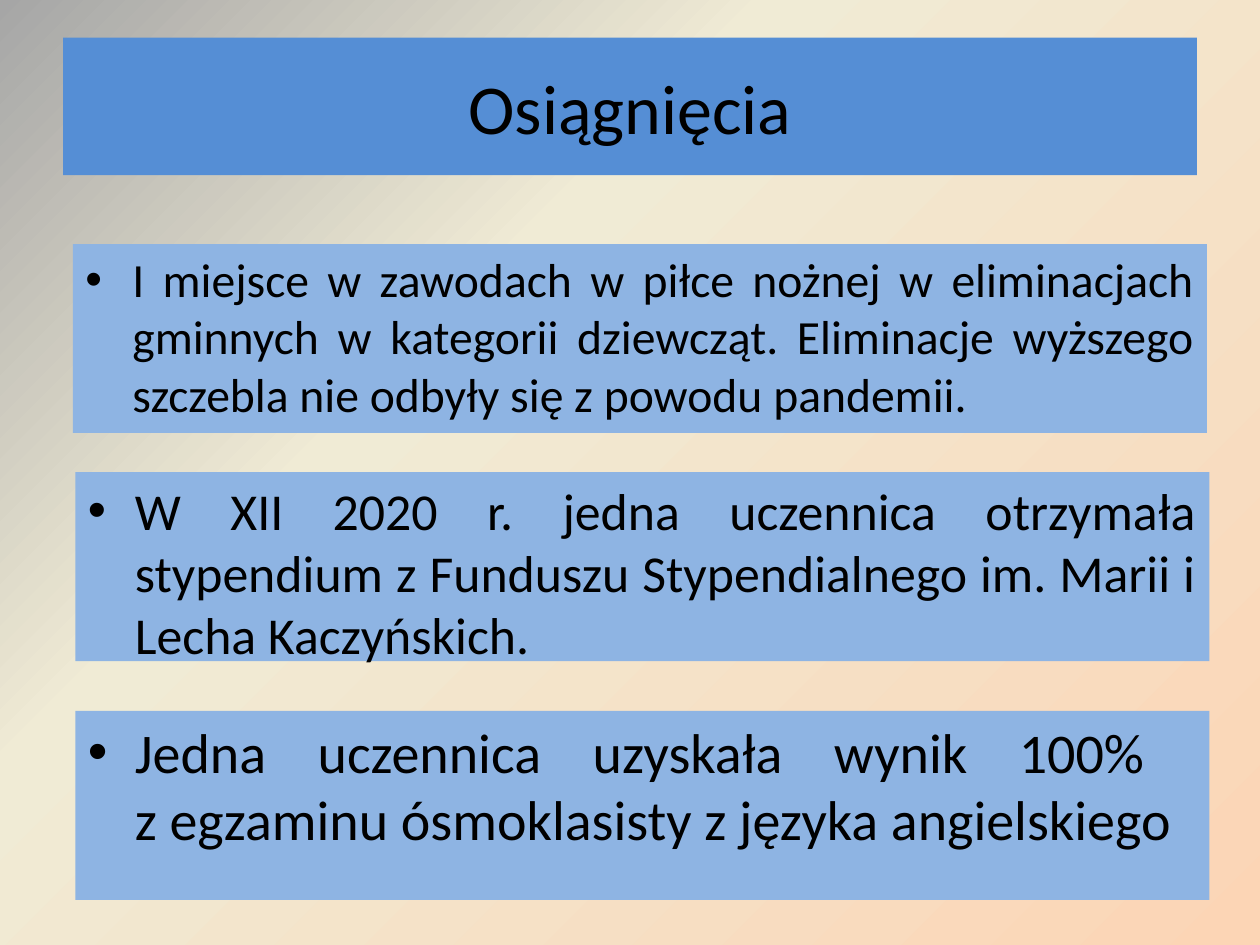
import pptx
import pptx.util
import pptx.oxml
import pptx.oxml.ns
import pptx.dml.color
import pptx.enum.shapes
import pptx.enum.text
from pptx.util import Cm

PP = pptx.enum.text.PP_ALIGN
ANCHOR = pptx.enum.text.MSO_ANCHOR
NS = pptx.oxml.ns.nsdecls("a", "p")


def paint(part, tone):
    """Fill a shape or a font with one solid colour."""
    part.fill.solid()
    part.fill.fore_color.rgb = pptx.dml.color.RGBColor.from_string(tone)


def style(para, size, align):
    para.alignment = align
    para.font.name = "Calibri"
    para.font.size = pptx.util.Pt(size)
    paint(para.font, "000000")


deck = pptx.Presentation()
deck.slide_width, deck.slide_height = Cm(25.4), Cm(19.05)
slide = deck.slides.add_slide(deck.slide_layouts[5])

# Round gradient that spreads from the bottom right corner
stops = [(0, "FCD5B5"), (65, "F0EBD5"), (100, "A6A6A6")]
marks = "".join(
    f'<a:gs pos="{pos * 1000}"><a:srgbClr val="{tone}"/></a:gs>' for pos, tone in stops
)
back = pptx.oxml.parse_xml(
    f'<p:bg {NS}><p:bgPr><a:gradFill rotWithShape="1"><a:gsLst>{marks}</a:gsLst>'
    '<a:path path="circle"><a:fillToRect l="100000" t="100000"/></a:path>'
    "</a:gradFill><a:effectLst/></p:bgPr></p:bg>"
)
slide.element.cSld.insert(0, back)

title = slide.shapes.title
title.left, title.top, title.width, title.height = Cm(1.27), Cm(0.76), Cm(22.86), Cm(2.77)
paint(title, "558ED5")
title.text_frame.text = "Osiągnięcia"
title.text_frame.vertical_anchor = ANCHOR.MIDDLE
style(title.text_frame.paragraphs[0], 40, PP.CENTER)

# Left, top, text size and wording of each panel
panels = [
    (1.47, 4.92, 27.2,
     "I miejsce w zawodach w piłce nożnej w eliminacjach gminnych w kategorii "
     "dziewcząt. Eliminacje wyższego szczebla nie odbyły się z powodu pandemii."),
    (1.52, 9.52, 29.6,
     "W XII 2020 r. jedna uczennica otrzymała stypendium z Funduszu "
     "Stypendialnego im. Marii i Lecha Kaczyńskich."),
    (1.52, 14.33, 32,
     "Jedna uczennica uzyskała wynik 100% \n"
     "z egzaminu ósmoklasisty z języka angielskiego "),
]
for left, top, size, words in panels:
    panel = slide.shapes.add_shape(
        pptx.enum.shapes.MSO_SHAPE.RECTANGLE, Cm(left), Cm(top), Cm(22.86), Cm(3.81)
    )
    panel.shadow.inherit = False
    panel.line.fill.background()
    paint(panel, "8EB4E3")
    frame = panel.text_frame
    frame.word_wrap = True
    frame.vertical_anchor = ANCHOR.TOP
    para = frame.paragraphs[0]
    para.text = words
    style(para, size, PP.JUSTIFY)
    props = para._p.get_or_add_pPr()
    props.set("marL", str(Cm(0.95)))
    props.set("indent", str(-Cm(0.95)))
    for tag in (f'<a:buFont {NS} typeface="Arial"/>', f'<a:buChar {NS} char="•"/>'):
        props.insert_element_before(pptx.oxml.parse_xml(tag), "a:tabLst", "a:defRPr", "a:extLst")

deck.save("out.pptx")
